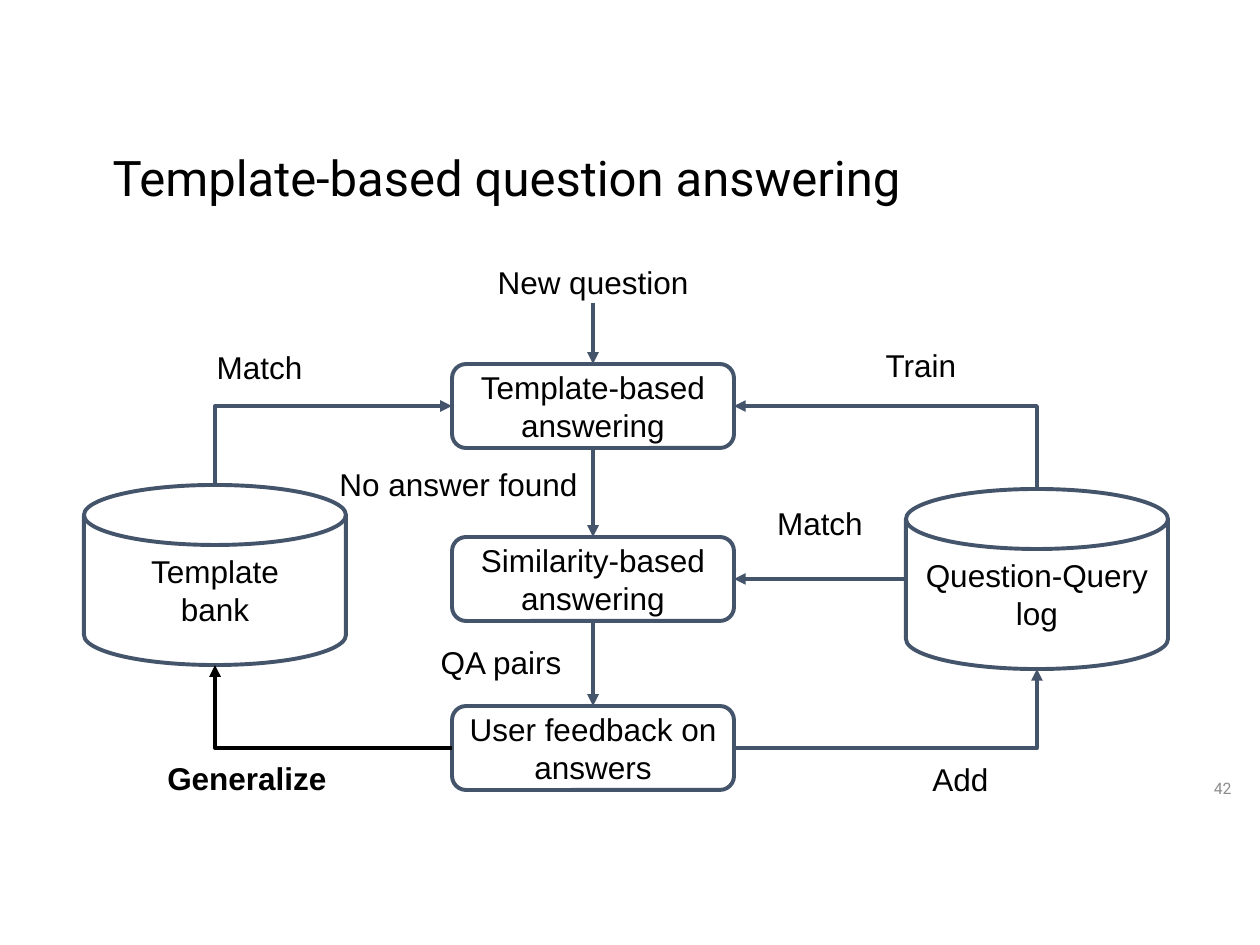
from dataclasses import dataclass

from lxml.etree import SubElement
from pptx import Presentation
from pptx.dml.color import RGBColor
from pptx.enum.shapes import MSO_CONNECTOR, MSO_SHAPE
from pptx.enum.text import MSO_ANCHOR, PP_ALIGN
from pptx.oxml.ns import qn
from pptx.util import Inches, Pt


@dataclass(frozen=True)
class Theme:
    ink: RGBColor = RGBColor(0, 0, 0)
    outline: RGBColor = RGBColor(0x44, 0x54, 0x6A)
    muted: RGBColor = RGBColor(0x8C, 0x8C, 0x8C)
    title_size: Pt = Pt(28)
    body_size: Pt = Pt(18)
    number_size: Pt = Pt(9)
    line_width: Pt = Pt(2.25)
    title_font: str = "Roboto"
    body_font: str = "Arial"


theme = Theme()
PX = Inches(1) / 126
INSET = Inches(0.1)
FRAME = {
    "word_wrap": True,
    "vertical_anchor": MSO_ANCHOR.MIDDLE,
    "margin_left": INSET,
    "margin_right": INSET,
    "margin_top": INSET,
    "margin_bottom": INSET,
}


def write(shape, text, alignment, name, size, color, bold=False):
    frame = shape.text_frame
    frame.text = text
    for key, value in FRAME.items():
        setattr(frame, key, value)
    for paragraph in frame.paragraphs:
        paragraph.alignment = alignment
        for key, value in {"name": name, "size": size, "bold": bold}.items():
            setattr(paragraph.font, key, value)
        paragraph.font.color.rgb = color


def style_arrow(connector, color):
    connector.line.color.rgb = color
    connector.line.width = theme.line_width
    properties = connector._element.spPr
    SubElement(properties.find(qn("a:ln")), qn("a:tailEnd"), type="triangle")
    SubElement(properties, qn("a:effectLst"))


presentation = Presentation()
presentation.slide_width = Inches(10)
presentation.slide_height = Inches(7.5)
slide = presentation.slides.add_slide(presentation.slide_layouts[5])

title = slide.shapes.title
for key, value in {"left": 100, "top": 141, "width": 1076, "height": 79}.items():
    setattr(title, key, round(value * PX))
write(title, "Template-based question answering", PP_ALIGN.LEFT,
      theme.title_font, theme.title_size, theme.ink)
title.text_frame.paragraphs[0].line_spacing = 0.9

BOX_LEFT, BOX_WIDTH, BOX_HEIGHT = 452, 282, 84
DISK_WIDTH, DISK_HEIGHT = 262, 180
BOX, DISK = MSO_SHAPE.ROUNDED_RECTANGLE, MSO_SHAPE.FLOWCHART_MAGNETIC_DISK
nodes = {}
for key, text, kind, left, top, width, height, outlined in [
    ("question", "New question", BOX, BOX_LEFT, 261, BOX_WIDTH, 42, False),
    ("template", "Template-based answering", BOX, BOX_LEFT, 364, BOX_WIDTH, BOX_HEIGHT, True),
    ("similarity", "Similarity-based answering", BOX, BOX_LEFT, 537, BOX_WIDTH, BOX_HEIGHT, True),
    ("feedback", "User feedback on answers", BOX, BOX_LEFT, 706, BOX_WIDTH, BOX_HEIGHT, True),
    ("bank", "Template\nbank", DISK, 84, 485, DISK_WIDTH, DISK_HEIGHT, True),
    ("log", "Question-Query log", DISK, 906, 489, DISK_WIDTH, DISK_HEIGHT, True),
    ("train", "Train", BOX, 725, 323, 392, 83, False),
    ("match template", "Match", BOX, 67, 327, 385, 79, False),
    ("no answer", "No answer found", BOX, 325, 463, 298, 42, False),
    ("match query", "Match", BOX, 702, 481, 236, 83, False),
    ("pairs", "QA pairs", BOX, 411, 622, 180, 80, False),
    ("add", "Add", BOX, 734, 742, 453, 73, False),
    ("generalize", "Generalize", BOX, 84, 757, 326, 42, False),
]:
    shape = slide.shapes.add_shape(
        kind, *(round(value * PX) for value in (left, top, width, height)))
    shape.shadow.inherit = False
    shape.fill.background()
    if outlined:
        shape.line.color.rgb = theme.outline
        shape.line.width = theme.line_width
    else:
        shape.line.fill.background()
    alignment = PP_ALIGN.LEFT if key == "no answer" else PP_ALIGN.CENTER
    write(shape, text, alignment, theme.body_font, theme.body_size, theme.ink,
          key == "generalize")
    nodes[key] = shape

flow = ["question", "template", "similarity", "feedback"]
for upper, lower in zip(flow, flow[1:]):
    connector = slide.shapes.add_connector(MSO_CONNECTOR.STRAIGHT, 0, 0, 0, 0)
    connector.begin_connect(nodes[upper], 2)
    connector.end_connect(nodes[lower], 0)
    style_arrow(connector, theme.outline)

log = nodes["log"]
query_match = slide.shapes.add_connector(
    MSO_CONNECTOR.STRAIGHT, log.left, log.top + log.height // 2, 0, 0)
query_match.begin_y = nodes["similarity"].top + nodes["similarity"].height // 2
query_match.end_connect(nodes["similarity"], 3)
style_arrow(query_match, theme.outline)

DISK_TOP, DISK_BOTTOM = 1, 3
for start, start_site, end, end_site, begin, finish, turn, flip, color in [
    ("log", DISK_TOP, "template", 3, (1037, 489), (734, 406), 90, "1", theme.outline),
    ("bank", DISK_TOP, "template", 1, (215, 485), (452, 406), 270, "0", theme.outline),
    ("feedback", 3, "log", DISK_BOTTOM, (734, 748), (1037, 669), 180, "1", theme.outline),
    ("feedback", 1, "bank", DISK_BOTTOM, (452, 748), (215, 665), 180, "0", theme.ink),
]:
    connector = slide.shapes.add_connector(MSO_CONNECTOR.ELBOW, 0, 0, 0, 0)
    connector.begin_connect(nodes[start], start_site)
    connector.end_connect(nodes[end], end_site)
    width, height = (abs(a - b) for a, b in zip(begin, finish))
    if turn != 180:
        width, height = height, width
    center_x, center_y = ((a + b) / 2 for a, b in zip(begin, finish))
    place = {"left": center_x - width / 2, "top": center_y - height / 2,
             "width": width, "height": height}
    for key, value in place.items():
        setattr(connector, key, round(value * PX))
    properties = connector._element.spPr
    properties.find(qn("a:prstGeom")).set("prst", "bentConnector2")
    for key, value in {"rot": str(turn * 60000), "flipH": flip, "flipV": "0"}.items():
        properties.find(qn("a:xfrm")).set(key, value)
    style_arrow(connector, color)

number = slide.shapes.add_textbox(*(round(value * PX) for value in (1168, 761, 76, 54)))
write(number, "42", PP_ALIGN.RIGHT, theme.title_font, theme.number_size, theme.muted)

presentation.save("out.pptx")
